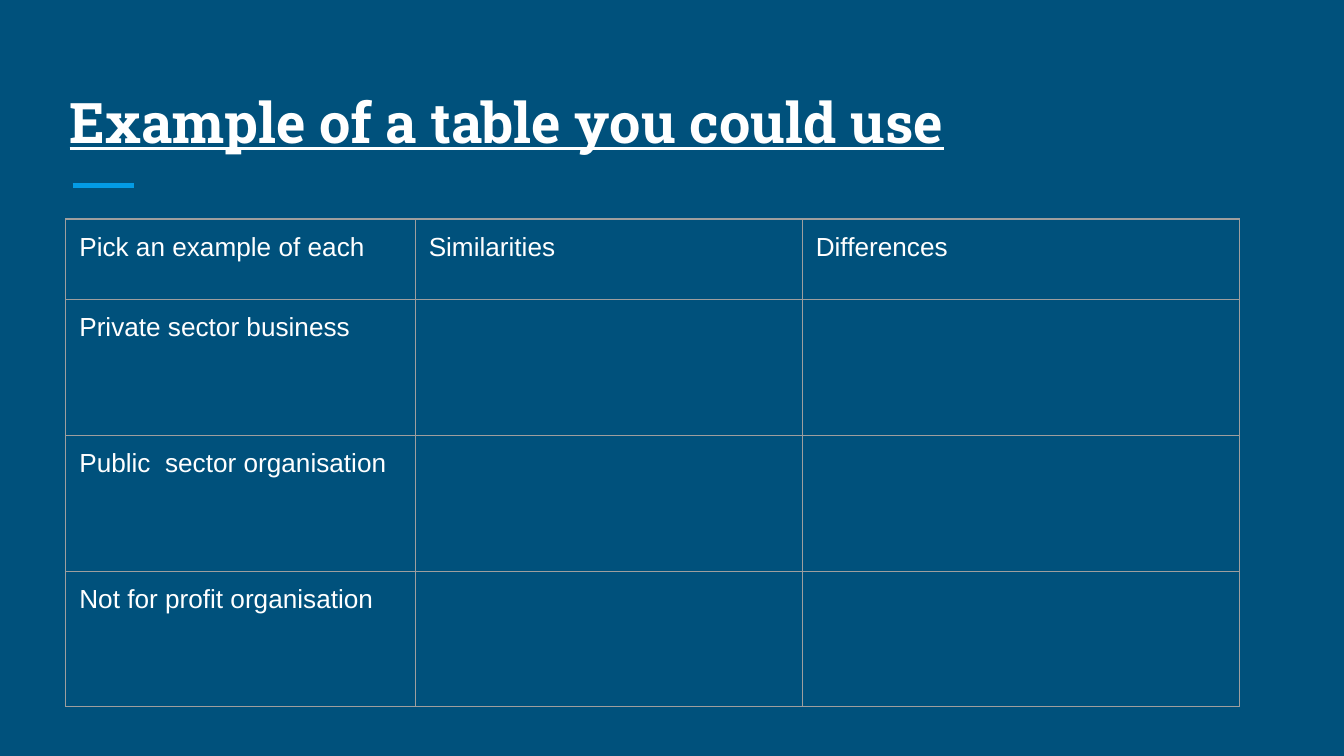
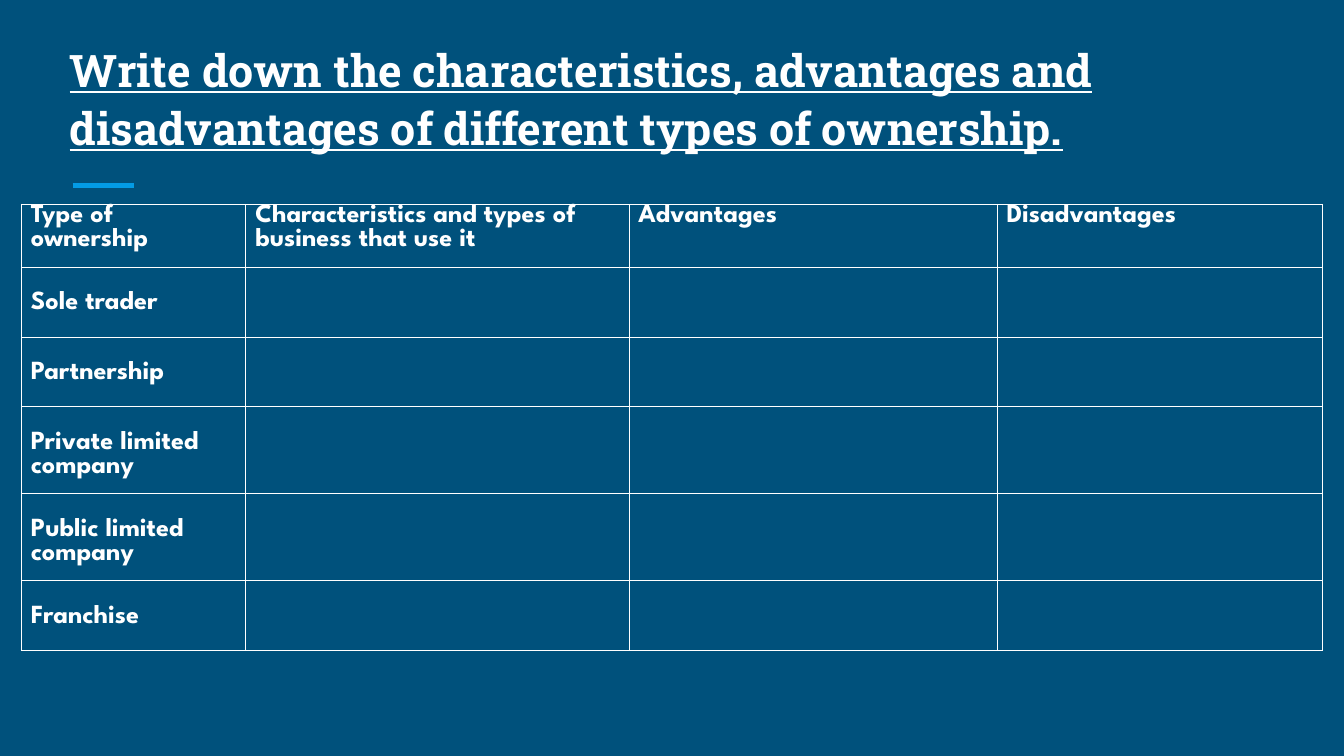
from lxml.etree import SubElement as Sub
from pptx import Presentation
from pptx.dml.color import RGBColor as RGB
from pptx.enum.shapes import MSO_CONNECTOR as Conn
from pptx.enum.text import MSO_ANCHOR as Anchor
from pptx.oxml.ns import qn
from pptx.util import Inches, Pt

HUES = {"back": "00517C", "rule": "039BE5", "text": "FFFFFF", "grid": "9E9E9E"}
SLAB = "Roboto Slab"
CELL = 14

SLIDES = [
    {
        "title": "Example of a table you could use",
        "box": (0.42, 0.5, 9.15, 0.75), "size": 30, "space": None, "after": 0,
        "heads": ["Pick an example of each", "Similarities", "Differences"],
        "names": ["Private sector business", "Public  sector organisation",
                  "Not for profit organisation"],
        "spot": (0.49, 1.63), "cols": [2.6, 2.88, 3.25],
        "rows": [0.6] + [1.01] * 3,
        "font": "Arial", "bold": False, "pad": (0.1, 0.1), "drop": 0,
        "edge": ("grid", 0.75),
    },
    {
        "title": "Write down the characteristics, advantages and "
                 "disadvantages of different types of ownership.",
        "box": (0.42, 0.21, 9.42, 1.04), "size": 24, "space": 1.08, "after": 8,
        "heads": ["Type of ownership",
                  "Characteristics and types of business that use it",
                  "Advantages", "Disadvantages"],
        "names": ["Sole trader", "Partnership", "Private limited company",
                  "Public limited company", "Franchise"],
        "spot": (0.16, 1.52), "cols": [1.67, 2.85, 2.74, 2.42],
        "rows": [0.36, 0.52, 0.52, 0.54, 0.54, 0.52],
        "font": "League Spartan", "bold": True, "pad": (0.07, 0), "drop": 0.18,
        "edge": ("text", 0.5),
    },
]


def hue(name):
    """Return a named colour."""
    return RGB.from_string(HUES[name])


def style(part, face, size, bold, line=None):
    """Set the font of a paragraph or run."""
    font = part.font
    font.name, font.size, font.bold, font.underline = face, Pt(size), bold, line
    font.color.rgb = hue("text")


def add_title(slide, data):
    """Add the underlined title and the short rule below it."""
    rule = slide.shapes.add_connector(
        Conn.STRAIGHT, Inches(0.54), Inches(1.38), Inches(1), Inches(1.38))
    rule.line.color.rgb, rule.line.width = hue("rule"), Pt(3)
    Sub(rule._element.spPr, qn("a:effectLst"))
    frame = slide.shapes.add_textbox(*map(Inches, data["box"])).text_frame
    frame.word_wrap, frame.vertical_anchor = True, Anchor.BOTTOM
    frame.margin_left = frame.margin_right = Inches(0.1)
    frame.margin_top = frame.margin_bottom = Inches(0.1)
    para = frame.paragraphs[0]
    para.text = data["title"]
    para.line_spacing, para.space_after = data["space"], Pt(data["after"])
    style(para, SLAB, data["size"], True, True)


def add_edges(cell, name, width):
    """Draw the four borders of a cell."""
    props = cell._tc.get_or_add_tcPr()
    for at, side in enumerate(("lnL", "lnR", "lnT", "lnB")):
        line = props.makeelement(qn(f"a:{side}"), {"w": str(Pt(width))})
        fill = Sub(line, qn("a:solidFill"))
        Sub(fill, qn("a:srgbClr"), val=HUES[name])
        props.insert(at, line)


def fill_cell(cell, text, data, drop):
    """Write one cell with its margins, font and borders."""
    side, top = data["pad"]
    cell.fill.background()
    cell.margin_left = cell.margin_right = Inches(side)
    cell.margin_top, cell.margin_bottom = Inches(top + drop), Inches(top)
    para = cell.text_frame.paragraphs[0]
    if text:
        run = para.add_run()
        run.text = text
        style(run, data["font"], CELL, data["bold"])
    Sub(para._p, qn("a:endParaRPr"), sz=str(CELL * 100))
    add_edges(cell, *data["edge"])


def add_grid(slide, data):
    """Add the table with its headings and row names."""
    cols, rows = data["cols"], data["rows"]
    size = (*data["spot"], sum(cols), sum(rows))
    table = slide.shapes.add_table(
        len(rows), len(cols), *map(Inches, size)).table
    table.first_row = table.horz_banding = False
    for col, width in zip(table.columns, cols):
        col.width = Inches(width)
    blank = [""] * (len(cols) - 1)
    texts = [data["heads"]] + [[name, *blank] for name in data["names"]]
    for r, (row, line) in enumerate(zip(table.rows, texts)):
        row.height = Inches(rows[r])
        for cell, text in zip(row.cells, line):
            fill_cell(cell, text, data, data["drop"] if r else 0)


def main():
    """Build and save the slides."""
    deck = Presentation()
    deck.slide_width = Inches(10)
    deck.slide_height = deck.slide_width * 9 // 16
    fill = deck.slide_master.background.fill
    fill.solid()
    fill.fore_color.rgb = hue("back")
    for data in SLIDES:
        slide = deck.slides.add_slide(deck.slide_layouts[6])
        add_title(slide, data)
        add_grid(slide, data)
    deck.save("out.pptx")


if __name__ == "__main__":
    main()
